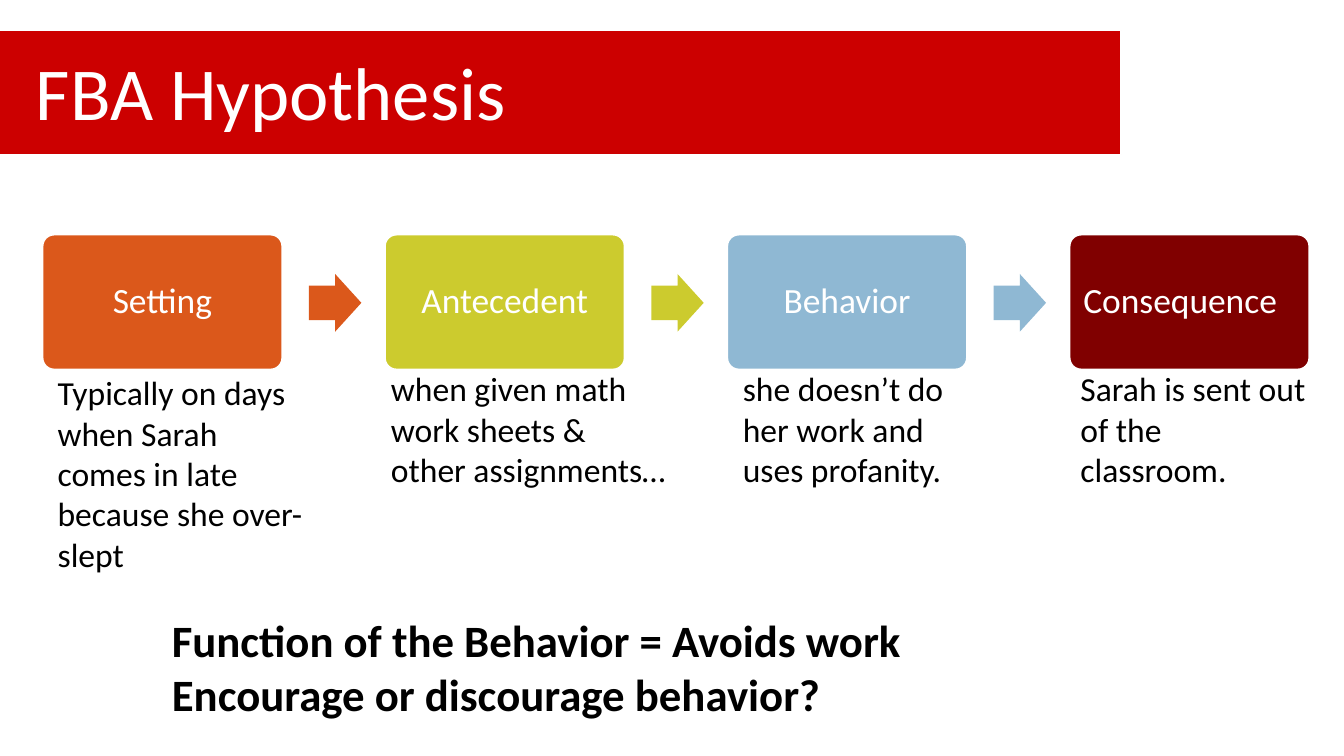
from pptx import Presentation
from pptx import util as u
from pptx.dml.color import RGBColor
from pptx.enum import shapes, text

WHITE = RGBColor(0xFF, 0xFF, 0xFF)
BLACK = RGBColor(0x00, 0x00, 0x00)
RED = RGBColor(0xCC, 0x00, 0x00)
ORANGE = RGBColor(0xDB, 0x58, 0x1B)
LIME = RGBColor(0xCC, 0xCB, 0x2E)
BLUE = RGBColor(0x8F, 0xB8, 0xD3)
MAROON = RGBColor(0x80, 0x00, 0x00)


def write(shape, content, size, color=BLACK, bold=False, spacing=1.0,
          align=text.PP_ALIGN.LEFT, anchor=text.MSO_ANCHOR.TOP,
          left=0.25, right=0.25):
    frame = shape.text_frame
    frame.word_wrap = True
    frame.vertical_anchor = anchor
    frame.margin_left, frame.margin_right = u.Cm(left), u.Cm(right)
    frame.margin_top = frame.margin_bottom = u.Cm(0.13)
    frame.text = content
    for paragraph in frame.paragraphs:
        paragraph.alignment = align
        paragraph.line_spacing = spacing
        font = paragraph.runs[0].font
        font.name, font.size, font.bold = "Calibri", u.Pt(size), bold
        font.color.rgb = color


def add_block(kind, box, fill, line_width=0):
    shape = slide.shapes.add_shape(kind, *map(u.Cm, box))
    shape.shadow.inherit = False
    shape.fill.solid()
    shape.fill.fore_color.rgb = fill
    if line_width:
        shape.line.color.rgb = WHITE
        shape.line.width = u.Pt(line_width)
    else:
        shape.line.fill.background()
    return shape


presentation = Presentation()
presentation.slide_width = u.Cm(25.4)
presentation.slide_height = u.Cm(14.29)
slide = presentation.slides.add_slide(presentation.slide_layouts[6])

add_block(shapes.MSO_SHAPE.RECTANGLE, (-0.2, 0.58, 21.39, 2.34), RED, 0.75)
title = slide.shapes.add_textbox(u.Cm(0.43), u.Cm(0.69), u.Cm(20.75), u.Cm(2.06))
write(title, "FBA Hypothesis", 40, color=WHITE, anchor=text.MSO_ANCHOR.MIDDLE)

steps = [
    ("Setting", ORANGE, "Typically on days when Sarah comes in late because she over-slept",
     (0.84, 6.91, 5.21, 4.11)),
    ("Antecedent", LIME, "when given math work sheets & other assignments…",
     (7.14, 6.83, 5.72, 3.33)),
    ("Behavior", BLUE, "she doesn’t do her work and uses profanity.",
     (13.79, 6.83, 5.11, 3.33)),
    ("Consequence", MAROON, "Sarah is sent out of the classroom.",
     (20.17, 6.83, 4.83, 4.62)),
]
STEP_LEFT, STEP_PITCH = 0.76, 6.47

for index, (label, color, description, box) in enumerate(steps):
    left = STEP_LEFT + index * STEP_PITCH
    is_last = index == len(steps) - 1
    step = add_block(shapes.MSO_SHAPE.ROUNDED_RECTANGLE, (left, 4.39, 4.62, 2.64), color, 3.5)
    step.adjustments[0] = 0.1
    write(step, label, 19, color=WHITE, spacing=0.9, align=text.PP_ALIGN.CENTER,
          anchor=text.MSO_ANCHOR.MIDDLE, left=0.13, right=0.48 if is_last else 0.13)
    if not is_last:
        arrow = add_block(shapes.MSO_SHAPE.RIGHT_ARROW, (left + 5.08, 5.18, 0.99, 1.09), color)
        arrow.adjustments[0] = 0.6
        arrow.adjustments[1] = 0.5
    write(slide.shapes.add_textbox(*map(u.Cm, box)), description, 18)

summary = slide.shapes.add_textbox(u.Cm(3), u.Cm(11.46), u.Cm(21.79), u.Cm(1.27))
write(summary, "Function of the Behavior = Avoids work\nEncourage or discourage behavior?",
      24, bold=True)

presentation.save("out.pptx")
